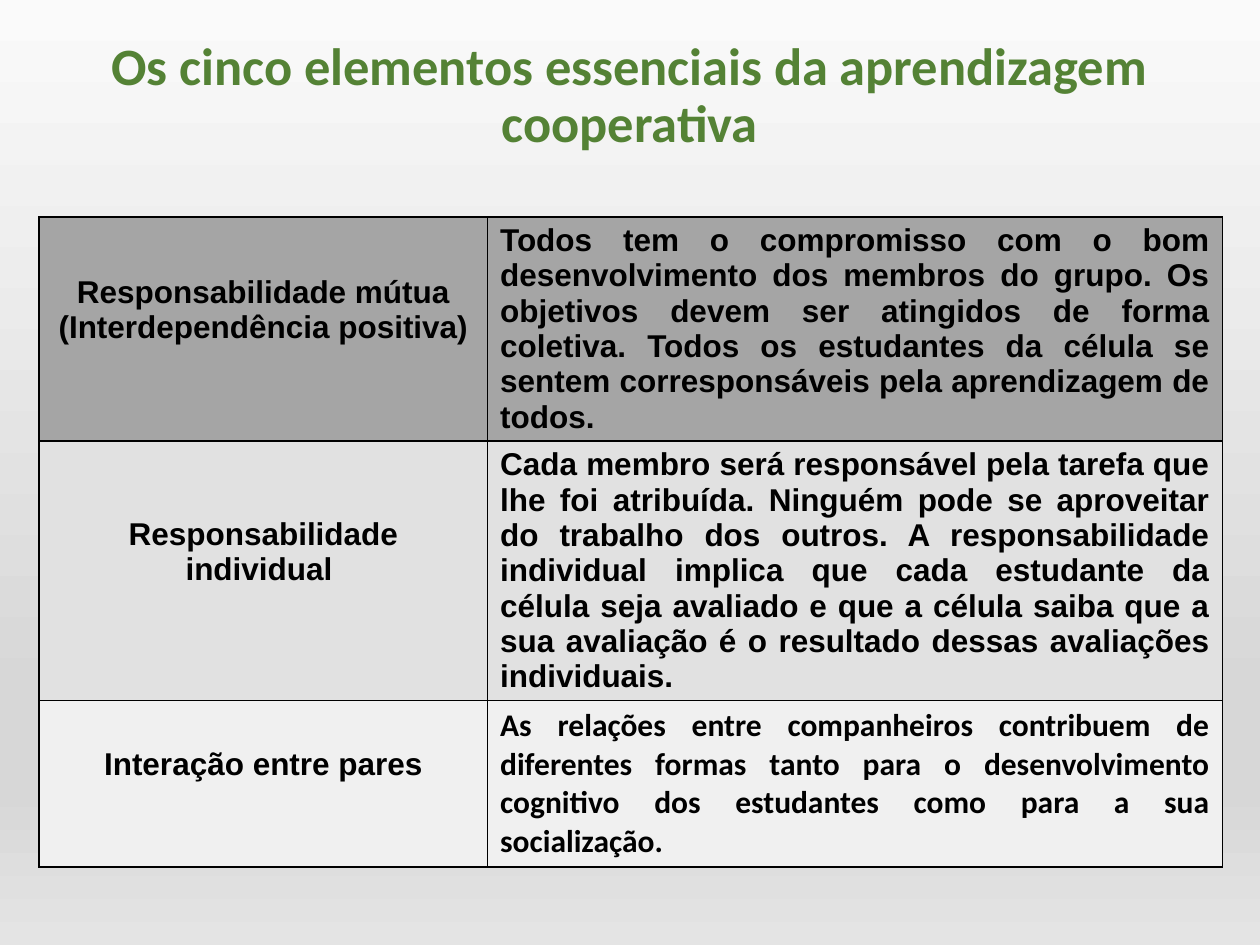
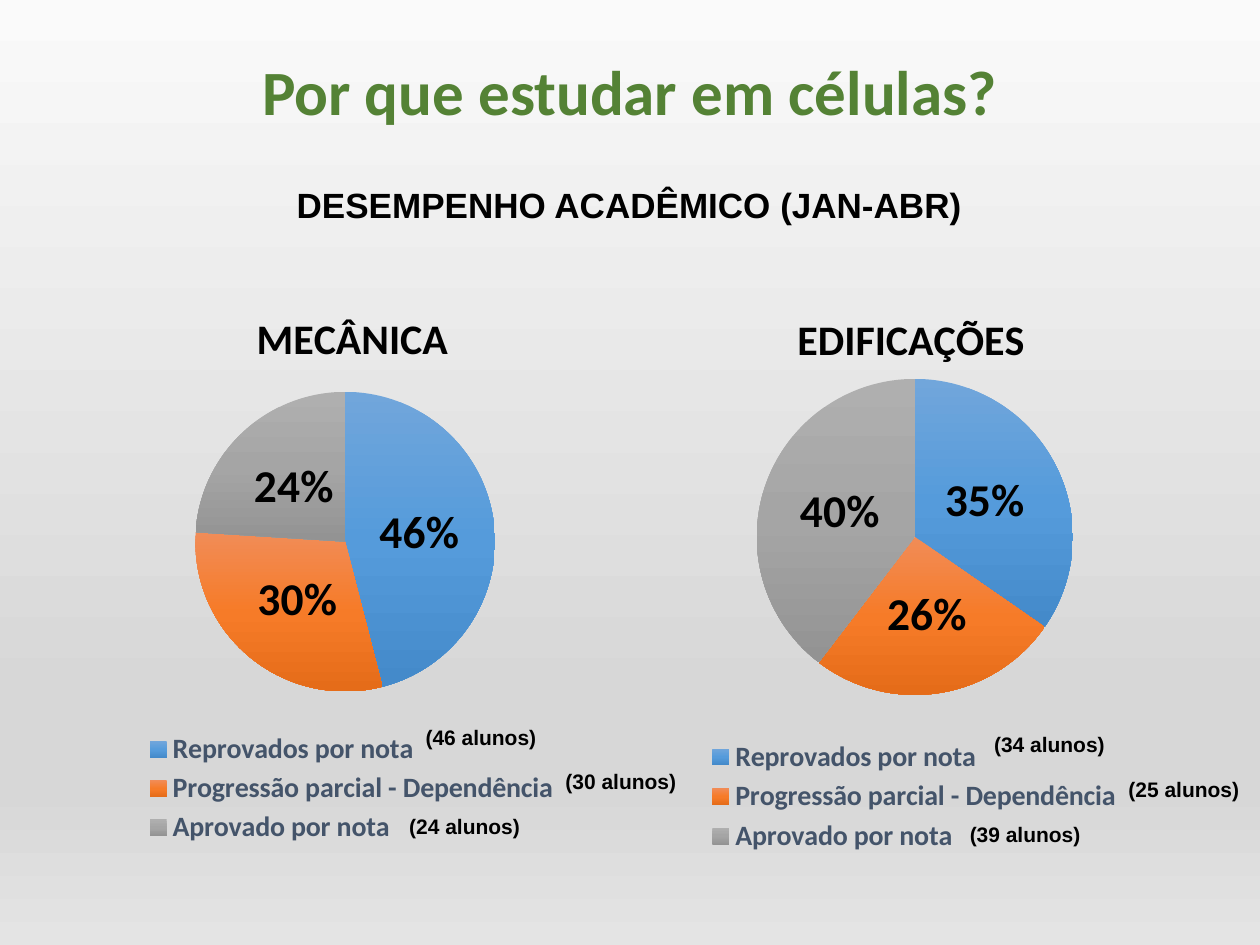
import pptx
import pptx.util
import pptx.chart.data
import pptx.dml.color
import pptx.enum.chart
import pptx.enum.text
import pptx.oxml
import pptx.oxml.ns

Cm, Pt = pptx.util.Cm, pptx.util.Pt
ALIGN = pptx.enum.text.PP_ALIGN
ANCHOR = pptx.enum.text.MSO_ANCHOR
qn = pptx.oxml.ns.qn

GREEN, BLACK, SLATE = "548235", "000000", "44546A"
BACK = [(0, "FAFAFA"), (74, "D7D7D7"), (83, "D7D7D7"), (100, "E4E4E4")]
SLICES = [
    [(0, "71A6DB"), (50, "559BDB"), (100, "448ACA")],
    [(0, "F18C57"), (50, "F67B28"), (100, "E56C19")],
    [(0, "AFAFAF"), (50, "A5A5A5"), (100, "939393")],
]
GROUPS = ["Reprovados por nota", "Progressão parcial - Dependência",
          "Aprovado por nota"]
ROWS = [
    ("A5A5A5", 4.5, "Arial", "Responsabilidade mútua (Interdependência positiva)",
     "Todos tem o compromisso com o bom desenvolvimento dos membros do grupo. "
     "Os objetivos devem ser atingidos de forma coletiva. Todos os estudantes "
     "da célula se sentem corresponsáveis pela aprendizagem de todos."),
    ("E1E1E1", 5.23, "Arial", "Responsabilidade individual ",
     "Cada membro será responsável pela tarefa que lhe foi atribuída. Ninguém "
     "pode se aproveitar do trabalho dos outros. A responsabilidade individual "
     "implica que cada estudante da célula seja avaliado e que a célula saiba "
     "que a sua avaliação é o resultado dessas avaliações individuais."),
    ("F0F0F0", 3.35, "Calibri", "Interação entre pares",
     "As relações entre companheiros contribuem de diferentes formas tanto para "
     "o desenvolvimento cognitivo dos estudantes como para a sua socialização."),
]
PIES = [
    dict(name="MECÂNICA", vals=(46, 30, 24), box=(-0.18, 5.46, 14.25, 11.73),
         head=(0.365, 0.054), plot=(0.289, 0.208, 0.424, 0.515),
         key=(0.21, 0.785, 0.6, 0.21)),
    dict(name="EDIFICAÇÕES", vals=(35, 26, 40), box=(11.76, 5.46, 13.34, 11.91),
         head=(0.312, 0.055), plot=(0.262, 0.183, 0.478, 0.535),
         key=(0.185, 0.785, 0.63, 0.21)),
]
COUNTS = [
    (46, 8.33, 14.48), (30, 11.15, 15.37), (24, 8, 16.28),
    (34, 19.79, 14.63), (25, 22.5, 15.52), (39, 19.3, 16.43),
]


def color(code):
    return pptx.dml.color.RGBColor.from_string(code)


def style(font, size, code=BLACK, face="Arial", bold=True):
    font.size, font.name, font.bold = Pt(size), face, bold
    font.color.rgb = color(code)


def write(frame, text, size, align=ALIGN.LEFT, space=None, **look):
    frame.word_wrap = True
    para = frame.paragraphs[0]
    para.alignment = align
    para.line_spacing = space
    run = para.add_run()
    run.text = text
    style(run.font, size, **look)


def blend(fill, root, stops):
    """Give fill a top-down gradient; its stops are the last ones in root."""
    fill.gradient()
    fill.gradient_angle = 270
    items = list(root.iter(qn("a:gsLst")))[-1]
    items.clear()
    for place, code in stops:
        stop = items.makeelement(qn("a:gs"), {"pos": str(place * 1000)})
        tint = stop.makeelement(qn("a:srgbClr"), {"val": code})
        stop.append(tint)
        items.append(stop)


def place(part, index, box, inner=False):
    """Set a manual layout, in fractions of the chart."""
    for old in part.findall(qn("c:layout")):
        part.remove(old)
    tags = [("layoutTarget", "inner")] if inner else []
    tags += [("xMode", "edge"), ("yMode", "edge")]
    tags += list(zip("xywh", box))
    body = "".join(f'<c:{tag} val="{val}"/>' for tag, val in tags)
    part.insert(index, pptx.oxml.parse_xml(
        f'<c:layout {pptx.oxml.ns.nsdecls("c")}>'
        f"<c:manualLayout>{body}</c:manualLayout></c:layout>"))


def start(deck, text, size, top, height):
    """Add a slide with the shared background and title style."""
    slide = deck.slides.add_slide(deck.slide_layouts[5])
    blend(slide.background.fill, slide.element, BACK)
    title = slide.shapes.title
    title.left, title.top = Cm(1.75), Cm(top)
    title.width, title.height = Cm(21.89), Cm(height)
    title.text_frame.auto_size = pptx.enum.text.MSO_AUTO_SIZE.NONE
    title.text_frame.vertical_anchor = ANCHOR.MIDDLE
    write(title.text_frame, text, size, ALIGN.CENTER, 0.9,
          code=GREEN, face="Calibri")
    return slide


def label(slide, text, box, size, align=ALIGN.LEFT):
    shape = slide.shapes.add_textbox(*map(Cm, box))
    write(shape.text_frame, text, size, align)


def edge(cell):
    """Draw a thin black border on all four sides."""
    props = cell._tc.get_or_add_tcPr()
    for index, side in enumerate(("lnL", "lnR", "lnT", "lnB")):
        props.insert(index, pptx.oxml.parse_xml(
            f'<a:{side} {pptx.oxml.ns.nsdecls("a")} w="12700"><a:solidFill>'
            f'<a:srgbClr val="{BLACK}"/></a:solidFill></a:{side}>'))


def grid(slide):
    high = sum(row[1] for row in ROWS)
    table = slide.shapes.add_table(
        len(ROWS), 2, Cm(0.79), Cm(4.37), Cm(23.85), Cm(high)).table
    table.columns[0].width, table.columns[1].width = Cm(9.04), Cm(14.81)
    for index, (shade, tall, face, name, text) in enumerate(ROWS):
        table.rows[index].height = Cm(tall)
        left, right = table.cell(index, 0), table.cell(index, 1)
        write(left.text_frame, name, 18, ALIGN.CENTER)
        left.vertical_anchor = ANCHOR.MIDDLE
        left.margin_bottom = Cm(0.89)
        write(right.text_frame, text, 18, ALIGN.JUSTIFY, face=face)
        for cell in (left, right):
            cell.fill.solid()
            cell.fill.fore_color.rgb = color(shade)
            edge(cell)


def pie(slide, name, vals, box, head, plot, key):
    data = pptx.chart.data.CategoryChartData()
    data.categories = GROUPS
    data.add_series("Series 1", vals)
    chart = slide.shapes.add_chart(
        pptx.enum.chart.XL_CHART_TYPE.PIE, *map(Cm, box), data).chart
    style(chart.font, 10, face="Calibri", bold=False)

    chart.has_title = True
    write(chart.chart_title.text_frame, name, 24, ALIGN.CENTER, face="Calibri")
    chart.has_legend = True
    chart.legend.position = pptx.enum.chart.XL_LEGEND_POSITION.BOTTOM
    chart.legend.include_in_layout = False
    style(chart.legend.font, 16, SLATE, "Calibri")

    pies = chart.plots[0]
    pies.vary_by_categories = True
    pies.has_data_labels = True
    tags = pies.data_labels
    tags.show_percentage, tags.show_value = True, False
    tags.number_format, tags.number_format_is_linked = "0%", False
    tags.position = pptx.enum.chart.XL_LABEL_POSITION.CENTER
    style(tags.font, 26, face="Calibri")

    root = chart.element
    for index, stops in enumerate(SLICES):
        look = pies.series[0].points[index].format
        blend(look.fill, root, stops)
        look.line.fill.background()
    place(root.find(".//" + qn("c:title")), 1, head)
    place(root.find(".//" + qn("c:plotArea")), 0, plot, inner=True)
    place(root.find(".//" + qn("c:legend")), 1, key)


def main():
    deck = pptx.Presentation()
    deck.slide_width, deck.slide_height = Cm(25.4), Cm(19.05)

    slide = start(deck, "Os cinco elementos essenciais da aprendizagem cooperativa",
                  30, 0.33, 3.25)
    grid(slide)

    slide = start(deck, "Por que estudar em células?", 36, 0.25, 3.33)
    label(slide, "DESEMPENHO ACADÊMICO (JAN-ABR)", (5.46, 3.58, 14.45, 1.12),
          20, ALIGN.CENTER)
    for item in PIES:
        pie(slide, **item)
    for count, left, top in COUNTS:
        label(slide, f"({count} alunos)", (left, top, 3.45, 0.76), 12)

    deck.save("out.pptx")


if __name__ == "__main__":
    main()
